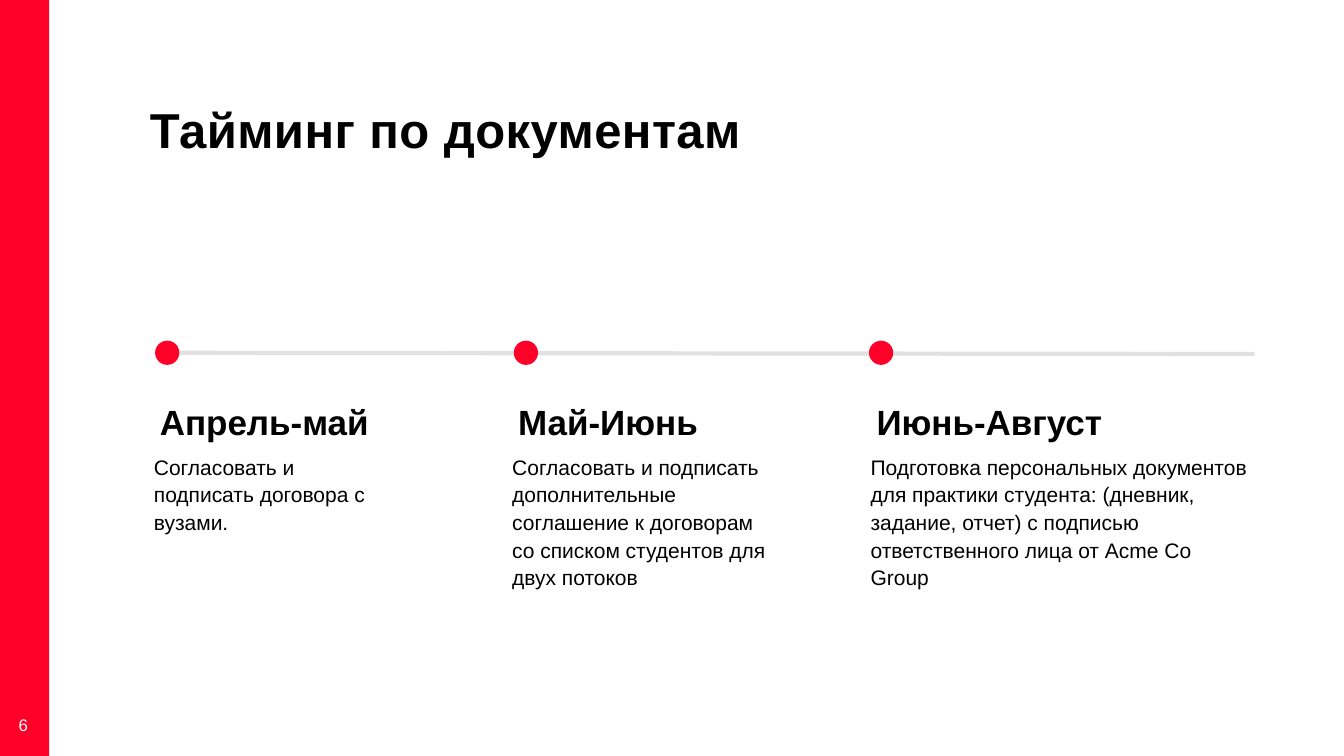
from pptx import Presentation
from pptx import util as u
from pptx.dml.color import RGBColor
from pptx.enum import shapes, text
from pptx.oxml.ns import qn
from lxml import etree

COLORS = {"red": "FF0028", "gray": "E1E1E1", "black": "000000", "white": "FFFFFF"}

STAGES = [
    ("Апрель-май", 3.91, 5.66, "Согласовать и подписать договора с вузами."),
    ("Май-Июнь", 12.95, 6.76,
     "Согласовать и подписать дополнительные соглашение к договорам "
     "со списком студентов для двух потоков"),
    ("Июнь-Август", 21.9, 9.7,
     "Подготовка персональных документов для практики студента: (дневник, "
     "задание, отчет) с подписью ответственного лица от Acme Co Group"),
]
LEFT, STEP = 3.78, 9.03
AXIS_Y, DOT = 8.89, 0.61


class TimelineSlide:
    font_name = "Arial"

    def __init__(self, deck):
        self.page = deck.slides.add_slide(deck.slide_layouts[6])

    def color(self, name):
        return RGBColor.from_string(COLORS[name])

    def shape(self, kind, left, top, width, height, color):
        shape = self.page.shapes.add_shape(
            kind, u.Cm(left), u.Cm(top), u.Cm(width), u.Cm(height))
        shape.shadow.inherit = False
        shape.fill.solid()
        shape.fill.fore_color.rgb = self.color(color)
        shape.line.fill.background()

    def line(self, x1, y1, x2, y2, color, width):
        line = self.page.shapes.add_connector(
            shapes.MSO_CONNECTOR.STRAIGHT, u.Cm(x1), u.Cm(y1), u.Cm(x2), u.Cm(y2))
        line.line.color.rgb = self.color(color)
        line.line.width = u.Pt(width)
        etree.SubElement(line._element.spPr, qn("a:effectLst"))

    def text(self, words, left, top, width, height, size, color="black", bold=False,
             inset=(0, 0), align=text.PP_ALIGN.LEFT, anchor=text.MSO_ANCHOR.TOP,
             line_spacing=None, tracking=None):
        box = self.page.shapes.add_textbox(
            u.Cm(left), u.Cm(top), u.Cm(width), u.Cm(height))
        frame = box.text_frame
        frame.word_wrap = True
        frame.vertical_anchor = anchor
        frame.margin_left = frame.margin_right = u.Cm(inset[0])
        frame.margin_top = frame.margin_bottom = u.Cm(inset[1])
        para = frame.paragraphs[0]
        para.alignment = align
        para.line_spacing = line_spacing
        span = para.add_run()
        span.text = words
        span.font.name = self.font_name
        span.font.size = u.Pt(size)
        span.font.bold = bold
        span.font.color.rgb = self.color(color)
        if tracking:
            span.font._element.set("spc", str(round(tracking * 100)))


def main():
    deck = Presentation()
    deck.slide_width, deck.slide_height = u.Cm(33.87), u.Cm(19.05)
    slide = TimelineSlide(deck)

    slide.shape(shapes.MSO_SHAPE.RECTANGLE, 0, 0, 1.24, 19.05, "red")
    slide.text("6", 0.05, 17.8, 1.08, 0.92, 12, color="white",
               inset=(0.2, 0.2), align=text.PP_ALIGN.CENTER)
    slide.text("Тайминг по документам", LEFT, 1.75, 29.46, 3, 35, bold=True,
               anchor=text.MSO_ANCHOR.MIDDLE, tracking=0.3)

    slide.line(4.22, AXIS_Y, 31.62, AXIS_Y + 0.03, "gray", 3)
    for index, (period, dot_left, width, task) in enumerate(STAGES):
        left = LEFT + index * STEP
        slide.shape(shapes.MSO_SHAPE.OVAL, dot_left, AXIS_Y - DOT / 2, DOT, DOT, "red")
        slide.text(period, left, 9.86, 7, 1.35, 25, bold=True,
                   inset=(0.25, 0.13), line_spacing=1.1)
        slide.text(task, left, 11.28, width, 3.68, 15,
                   inset=(0.1, 0.1), line_spacing=1.1)

    deck.save("out.pptx")


if __name__ == "__main__":
    main()
